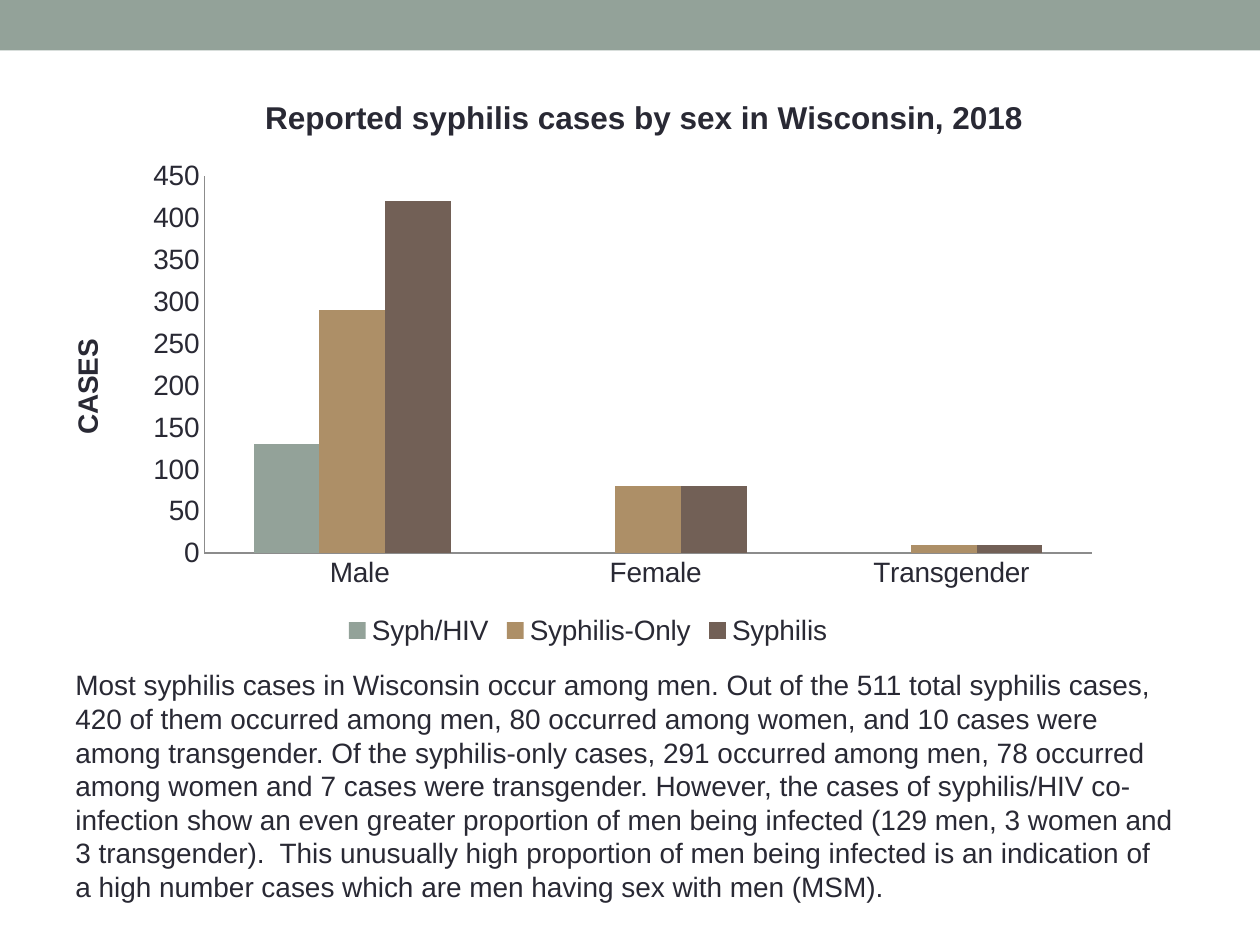
"""Build a slide with a clustered column chart of syphilis cases by sex and a commentary."""
import pptx
import pptx.chart.data
import pptx.dml.color
import pptx.enum.chart
import pptx.enum.shapes
import pptx.oxml
import pptx.util
from pptx.util import Cm, Pt

COLORS = {"ink": "292934", "sage": "93A299", "tan": "AD8F67", "brown": "726056", "axis": "8C8C8C"}
FONT = "Arial"
TITLE = "Reported syphilis cases by sex in Wisconsin, 2018"
AXIS_TITLE = "CASES"
CATEGORIES = ["  Male", "  Female", "  Transgender"]
SERIES = [
    ("Syph/HIV", (130, 0, 0), "sage"),
    ("Syphilis-Only", (290, 80, 10), "tan"),
    ("Syphilis", (420, 80, 10), "brown"),
]
BODY = (
    "Most syphilis cases in Wisconsin occur among men. Out of the 511 total syphilis cases, "
    "420 of them occurred among men, 80 occurred among women, and 10 cases were among transgender. "
    "Of the syphilis-only cases, 291 occurred among men, 78 occurred among women and 7 cases were "
    "transgender. However, the cases of syphilis/HIV co-infection show an even greater proportion "
    "of men being infected (129 men, 3 women and 3 transgender).  This unusually high proportion of "
    "men being infected is an indication of a high number cases which are men having sex with men (MSM)."
)
CHART_W, CHART_H = 21.17, 11.43


def rgb(name):
    return pptx.dml.color.RGBColor.from_string(COLORS[name])


def style(font, size, bold=False):
    font.name, font.size, font.bold = FONT, Pt(size), bold
    font.color.rgb = rgb("ink")


def set_title(owner, text, size):
    tf = owner.text_frame
    tf.text = text
    style(tf.paragraphs[0].font, size, True)


def place(element, x, y, w=None, h=None):
    """Give a chart part a manual layout, in centimetres from the chart's corner."""
    parts = [("xMode", "edge"), ("yMode", "edge"), ("x", x / CHART_W), ("y", y / CHART_H)]
    if w is not None:
        parts = [("layoutTarget", "inner")] + parts + [("w", w / CHART_W), ("h", h / CHART_H)]
    xml = "".join(f'<c:{tag} val="{val}"/>' for tag, val in parts)
    layout = pptx.oxml.parse_xml(
        '<c:layout xmlns:c="http://schemas.openxmlformats.org/drawingml/2006/chart">'
        f"<c:manualLayout>{xml}</c:manualLayout></c:layout>"
    )
    for old in element.findall(layout.tag):
        element.remove(old)
    texts = [i for i, child in enumerate(element) if child.tag.endswith("}tx")]
    element.insert(texts[0] + 1 if texts else 0, layout)


def add_case_chart(slide):
    data = pptx.chart.data.CategoryChartData()
    data.categories = CATEGORIES
    for name, values, _ in SERIES:
        data.add_series(name, values)
    chart = slide.shapes.add_chart(
        pptx.enum.chart.XL_CHART_TYPE.COLUMN_CLUSTERED,
        Cm(1.27), Cm(1.7), Cm(CHART_W), Cm(CHART_H), data,
    ).chart
    style(chart.font, 18)
    chart.has_title = True
    set_title(chart.chart_title, TITLE, 18)
    place(chart.chart_title._element, 3.96, 0.14)

    plot = chart.plots[0]
    plot.gap_width, plot.overlap, plot.vary_by_categories = 150, 0, False
    for series, (_, _, color) in zip(plot.series, SERIES):
        series.format.fill.solid()
        series.format.fill.fore_color.rgb = rgb(color)
    place(chart._chartSpace.chart.plotArea, 2.85, 1.85, 17.89, 7.6)

    for axis in (chart.category_axis, chart.value_axis):
        axis.has_major_gridlines = False
        axis.major_tick_mark = pptx.enum.chart.XL_TICK_MARK.NONE
        axis.minor_tick_mark = pptx.enum.chart.XL_TICK_MARK.NONE
        axis.format.line.color.rgb = rgb("axis")
        axis.format.line.width = Pt(0.75)
        style(axis.tick_labels.font, 16)
    value = chart.value_axis
    value.minimum_scale, value.maximum_scale, value.major_unit = 0, 450, 50
    set_title(value.axis_title, AXIS_TITLE, 16)
    place(value.axis_title._element, 0.03, 5.04)

    chart.has_legend = True
    chart.legend.position = pptx.enum.chart.XL_LEGEND_POSITION.BOTTOM
    chart.legend.include_in_layout = False
    style(chart.legend.font, 16)


def main():
    prs = pptx.Presentation()
    prs.slide_width, prs.slide_height = Cm(25.4), Cm(19.05)
    slide = prs.slides.add_slide(prs.slide_layouts[6])

    band = slide.shapes.add_shape(
        pptx.enum.shapes.MSO_SHAPE.RECTANGLE, 0, 0, prs.slide_width, Cm(1.02))
    band.shadow.inherit = False
    band.fill.solid()
    band.fill.fore_color.rgb = rgb("sage")
    band.line.fill.background()

    tf = slide.shapes.add_textbox(Cm(1.27), Cm(13.34), Cm(22.64), Cm(4.88)).text_frame
    tf.word_wrap = True
    p = tf.paragraphs[0]
    p.text = BODY
    p.line_spacing = 1.0
    style(p.font, 16)

    add_case_chart(slide)
    prs.save("out.pptx")


if __name__ == "__main__":
    main()
